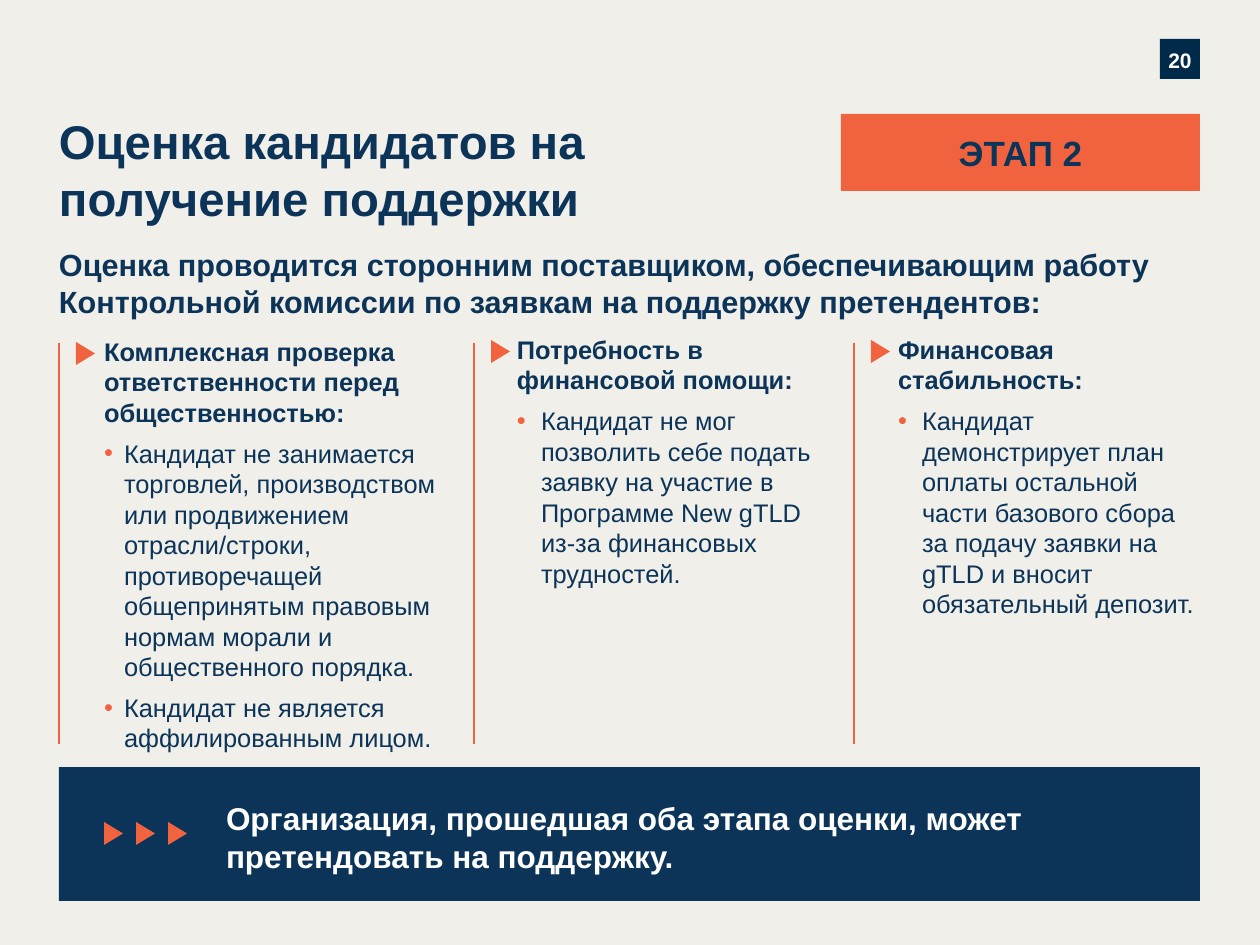
"""Build the slide on stage two of the evaluation of support applicants."""
from dataclasses import dataclass

from lxml.etree import SubElement
from pptx import Presentation
from pptx.dml.color import RGBColor
from pptx.enum.shapes import MSO_CONNECTOR, MSO_SHAPE
from pptx.enum.text import MSO_ANCHOR, MSO_AUTO_SIZE, PP_ALIGN
from pptx.oxml.ns import qn
from pptx.util import Pt

TITLE = "Оценка кандидатов на получение поддержки"
LEAD = ("Оценка проводится сторонним поставщиком, обеспечивающим работу "
        "Контрольной комиссии по заявкам на поддержку претендентов:")
STAGE = "ЭТАП 2"
PAGE_NUMBER = "20"
RESULT = "Организация, прошедшая оба этапа оценки, может претендовать на поддержку."
COLUMNS = [
    {"rule": 59, "box": (104, 336, 348, 408), "indent": 20,
     "heading": "Комплексная проверка ответственности перед общественностью:",
     "items": ["Кандидат не занимается торговлей, производством или продвижением "
               "отрасли/строки, противоречащей общепринятым правовым нормам морали "
               "и общественного порядка.",
               "Кандидат не является аффилированным лицом."]},
    {"rule": 474, "box": (517, 334, 316, 319), "indent": 24,
     "heading": "Потребность в финансовой помощи:",
     "items": ["Кандидат не мог позволить себе подать заявку на участие в Программе "
               "New gTLD из-за финансовых трудностей."]},
    {"rule": 854, "box": (898, 334, 302, 382), "indent": 24,
     "heading": "Финансовая стабильность:",
     "items": ["Кандидат демонстрирует план оплаты остальной части базового сбора "
               "за подачу заявки на gTLD и вносит обязательный депозит."]},
]


@dataclass(frozen=True)
class Theme:
    """Colours, font and type sizes of the slide."""
    paper: str = "F1EFEA"
    navy: str = "0B3458"
    dark: str = "002A49"
    orange: str = "F1633E"
    white: str = "FFFFFF"
    font: str = "Arial"
    title: float = 27
    stage: float = 20
    result: float = 18
    lead: float = 17.5
    body: float = 14.5
    number: float = 12
    rule: float = 1.25


THEME = Theme()
RULE_TOP, RULE_BOTTOM = 343, 744


def px(value):
    """Turn pixels at 126 to the inch into EMU."""
    return round(value * 914400 / 126)


def colour(value):
    """Turn a hex string into a colour."""
    return RGBColor.from_string(value)


def place(shape, box):
    """Move a shape to left, top, width and height in pixels."""
    shape.left, shape.top, shape.width, shape.height = map(px, box)
    return shape


def add_text(shape, text, *, size, ink=THEME.navy, bold=True, align=PP_ALIGN.LEFT,
             anchor=MSO_ANCHOR.TOP, inset=0, spacing=1.0, before=0, after=0,
             indent=0, bullet=False, first=True):
    """Write one formatted paragraph into a shape."""
    frame = shape.text_frame
    if first:
        frame.word_wrap = True
        frame.auto_size = MSO_AUTO_SIZE.NONE
        frame.vertical_anchor = anchor
        frame.margin_left = frame.margin_right = px(inset)
        frame.margin_top = frame.margin_bottom = px(inset)
    para = frame.paragraphs[0] if first else frame.add_paragraph()
    para.alignment = align
    para.line_spacing = spacing
    para.space_before, para.space_after = Pt(before), Pt(after)
    properties = para._p.get_or_add_pPr()
    properties.set("marL", str(px(indent)))
    properties.set("indent", str(-px(indent)))
    if bullet:
        tint = SubElement(properties, qn("a:buClr"))
        SubElement(tint, qn("a:srgbClr"), val=THEME.orange)
        SubElement(properties, qn("a:buFont"), typeface=THEME.font)
        SubElement(properties, qn("a:buChar"), char="•")
    else:
        SubElement(properties, qn("a:buNone"))
    span = para.add_run()
    span.text = text
    span.font.name, span.font.size, span.font.bold = THEME.font, Pt(size), bold
    span.font.color.rgb = colour(ink)


def add_block(page, box, fill, kind=MSO_SHAPE.RECTANGLE):
    """Add a plain filled shape without outline or shadow."""
    shape = page.shapes.add_shape(kind, *map(px, box))
    shape.shadow.inherit = False
    shape.fill.solid()
    shape.fill.fore_color.rgb = colour(fill)
    shape.line.fill.background()
    return shape


def add_marker(page, left, top):
    """Add an orange triangle that points right."""
    marker = add_block(page, (left, top, 23, 19), THEME.orange, MSO_SHAPE.ISOSCELES_TRIANGLE)
    marker.rotation = 90


def add_rule(page, x):
    """Add the upright rule to the left of a column."""
    rule = page.shapes.add_connector(
        MSO_CONNECTOR.STRAIGHT, px(x), px(RULE_TOP), px(x), px(RULE_BOTTOM))
    rule.line.color.rgb = colour(THEME.orange)
    rule.line.width = Pt(THEME.rule)
    SubElement(rule._element.spPr, qn("a:effectLst"))


def add_column(page, holder, column):
    """Fill one column with its rule, marker, heading and list."""
    place(holder, column["box"])
    add_text(holder, column["heading"], size=THEME.body)
    for item in column["items"]:
        last = item == column["items"][-1]
        add_text(holder, item, size=THEME.body, bold=False, before=6, after=6 if last else 0,
                 indent=column["indent"], bullet=True, first=False)
    add_rule(page, column["rule"])
    add_marker(page, column["rule"] + 15, column["box"][1] + 8)


def main():
    """Build and save the deck."""
    deck = Presentation()
    deck.slide_width, deck.slide_height = px(1260), px(945)
    page = deck.slides.add_slide(deck.slide_layouts.get_by_name("Comparison"))
    page.background.fill.solid()
    page.background.fill.fore_color.rgb = colour(THEME.paper)
    title, lead, *holders = list(page.placeholders)[:5]

    add_text(place(title, (59, 112, 741, 63)), TITLE, size=THEME.title)
    add_text(place(lead, (59, 246, 1142, 79)), LEAD, size=THEME.lead)
    for holder, column in zip(holders, COLUMNS):
        add_column(page, holder, column)

    centred = {"align": PP_ALIGN.CENTER, "anchor": MSO_ANCHOR.MIDDLE}
    number = add_block(page, (1160, 39, 40, 40), THEME.dark)
    add_text(number, PAGE_NUMBER, size=THEME.number, ink=THEME.white, spacing=1.08, **centred)
    stage = add_block(page, (841, 114, 359, 77), THEME.orange)
    add_text(stage, STAGE, size=THEME.stage, **centred)

    add_block(page, (59, 767, 1141, 134), THEME.navy)
    for index in range(3):
        add_marker(page, 102 + 32 * index, 824)
    result = page.shapes.add_textbox(*map(px, (213, 786, 953, 48)))
    add_text(result, RESULT, size=THEME.result, ink=THEME.white, inset=13)

    for holder in list(page.placeholders):
        if not holder.text_frame.text:
            holder._element.getparent().remove(holder._element)
    deck.save("out.pptx")


if __name__ == "__main__":
    main()
